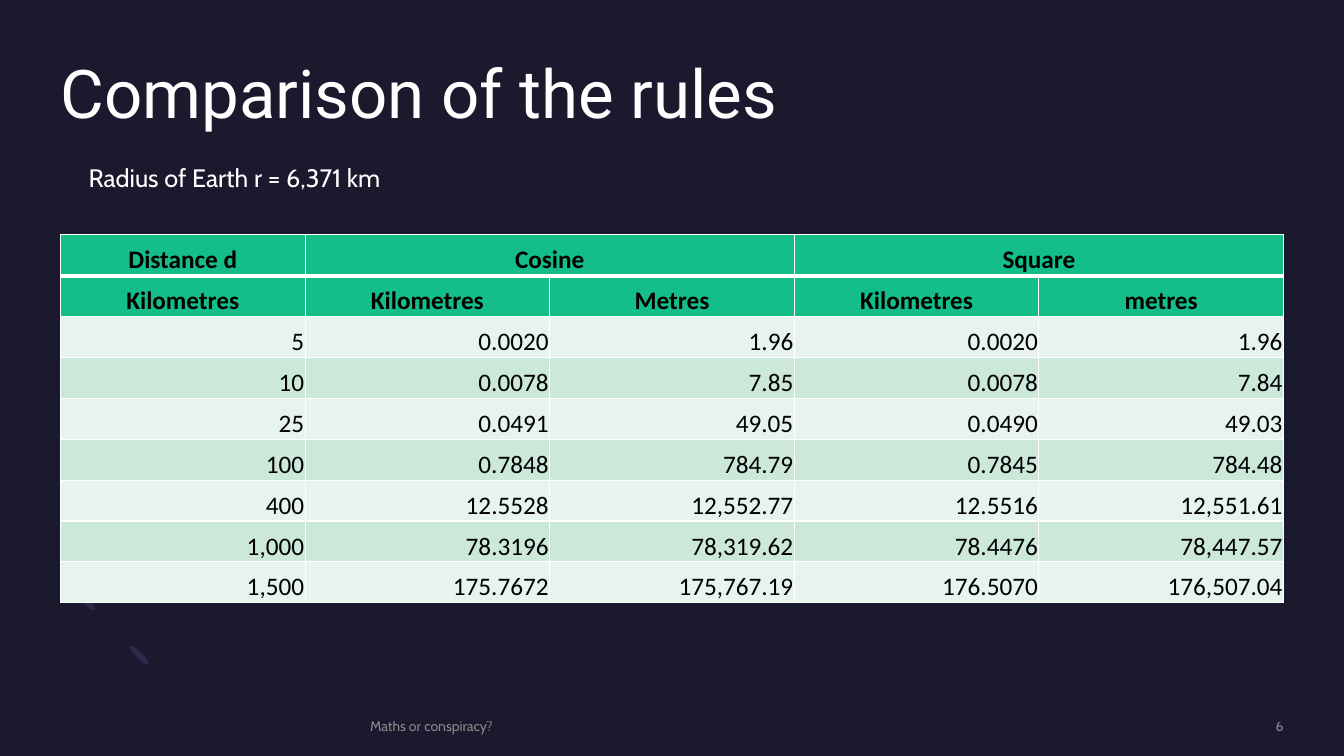
from lxml.etree import SubElement
from pptx import Presentation
from pptx.dml.color import RGBColor
from pptx.enum.shapes import MSO_SHAPE as Shape
from pptx.enum.text import MSO_ANCHOR as Anchor, PP_ALIGN as Align
from pptx.oxml.ns import qn
from pptx.util import Inches, Pt

TITLE = "Comparison of the rules"
RADIUS = "Radius of Earth r = 6,371 km"
FOOTER, PAGE_NUMBER = "Maths or conspiracy?", "6"
ROWS = [
    ("Distance d", "Cosine", "", "Square", ""),
    ("Kilometres", "Kilometres", "Metres", "Kilometres", "metres"),
    ("5", "0.0020", "1.96", "0.0020", "1.96"),
    ("10", "0.0078", "7.85", "0.0078", "7.84"),
    ("25", "0.0491", "49.05", "0.0490", "49.03"),
    ("100", "0.7848", "784.79", "0.7845", "784.48"),
    ("400", "12.5528", "12,552.77", "12.5516", "12,551.61"),
    ("1,000", "78.3196", "78,319.62", "78.4476", "78,447.57"),
    ("1,500", "175.7672", "175,767.19", "176.5070", "176,507.04"),
]
HEADER_ROWS = 2
HEADER_FILL, BAND_FILLS = "13BE89", ("E7F4ED", "CCE8DA")
WHITE, BLACK, GREY = "FFFFFF", "000000", "A6A6A6"
LEFT, WIDTH = 0.6, 12.13
TABLE_TOP, TABLE_HEIGHT = 2.33, 3.65
PETALS = [(1.35, 6.37), (0.82, 5.83)]
ARC_CURVES = [
    [((0.76, 6.59), (0.56, 6.39), (0.58, 6.05), (0.81, 5.82))],
    [((0.99, 6.0), (0.87, 6.11), (0.86, 6.29), (0.96, 6.38)),
     ((0.96, 6.38), (1.06, 6.48), (1.23, 6.47), (1.35, 6.36))],
    [((1.52, 6.54), (1.3, 6.76), (0.95, 6.79), (0.76, 6.59))],
]


def paint(fill, color, alpha=None):
    fill.solid()
    fill.fore_color.rgb = RGBColor.from_string(color)
    if alpha is not None:
        color_node = next(fill._xPr.iter(qn("a:srgbClr")))
        SubElement(color_node, qn("a:alpha"), val=str(alpha * 1000))


def write(frame, text, size=18, font="Cabin", color=WHITE, alpha=None,
          bold=False, align=Align.LEFT, spacing=None):
    para = frame.paragraphs[0]
    para.alignment = align
    if spacing:
        para.line_spacing = spacing
    span = para.add_run()
    span.text = text
    span.font.size, span.font.name, span.font.bold = Pt(size), font, bold
    paint(span.font.fill, color, alpha)


def set_margins(holder, left, top, right, bottom):
    holder.margin_left, holder.margin_top = Inches(left), Inches(top)
    holder.margin_right, holder.margin_bottom = Inches(right), Inches(bottom)


def add_text(page, text, left, top, width, height, **style):
    box = page.shapes.add_textbox(*map(Inches, (left, top, width, height)))
    box.text_frame.word_wrap = True
    write(box.text_frame, text, **style)
    return box


def add_border(cell, side, points):
    line = SubElement(cell._tc.get_or_add_tcPr(), qn(f"a:ln{side}"), w=str(Pt(points)))
    SubElement(SubElement(line, qn("a:solidFill")), qn("a:srgbClr"), val=WHITE)


def sample(curve, steps=12):
    for step in range(steps + 1):
        t = step / steps
        weights = ((1 - t) ** 3, 3 * t * (1 - t) ** 2, 3 * t * t * (1 - t), t ** 3)
        yield tuple(Inches(sum(w * point[axis] for w, point in zip(weights, curve)))
                    for axis in (0, 1))


def finish_shape(shape, color, alpha=None):
    paint(shape.fill, color, alpha)
    shape.line.fill.background()
    shape.shadow.inherit = False


def add_decoration(page):
    for left, top in PETALS:
        petal = page.shapes.add_shape(Shape.OVAL, *map(Inches, (left, top, 0.06, 0.26)))
        petal.rotation = 135
        finish_shape(petal, "2C284A")
    points = [point for group in ARC_CURVES for curve in group for point in sample(curve)]
    builder = page.shapes.build_freeform(*points[0])
    builder.add_line_segments(points[1:], close=True)
    finish_shape(builder.convert_to_shape(), "7771B2", 2)


def add_comparison(page):
    columns = len(ROWS[0])
    table = page.shapes.add_table(
        len(ROWS), columns, *map(Inches, (LEFT, TABLE_TOP, WIDTH, TABLE_HEIGHT))).table
    table.first_row = table.horz_banding = False
    for column in table.columns:
        column.width = Inches(WIDTH / columns)
    for index, values in enumerate(ROWS):
        table.rows[index].height = Inches(TABLE_HEIGHT / len(ROWS))
        header = index < HEADER_ROWS
        for position, value in enumerate(values):
            cell = table.cell(index, position)
            set_margins(cell, 0.01, 0.01, 0.01, 0)
            cell.vertical_anchor = Anchor.BOTTOM
            for side in "LRTB":
                heavy = (index, side) in ((0, "B"), (1, "T"))
                add_border(cell, side, 3 if heavy else 1)
            paint(cell.fill, HEADER_FILL if header else BAND_FILLS[index % 2])
            if value:
                write(cell.text_frame, value, font="Calibri", color=BLACK, bold=header,
                      align=Align.CENTER if header else Align.RIGHT)
    for start in (1, 3):
        table.cell(0, start).merge(table.cell(0, start + 1))


def main():
    deck = Presentation()
    deck.slide_width, deck.slide_height = Inches(13.33), Inches(7.5)
    page = deck.slides.add_slide(deck.slide_layouts[5])
    paint(page.background.fill, "1B192E")
    add_decoration(page)

    title = page.shapes.title
    title.left, title.top, title.width, title.height = map(Inches, (LEFT, 0.6, WIDTH, 0.76))
    set_margins(title.text_frame, 0, 0, 0, 0)
    title.text_frame.vertical_anchor = Anchor.TOP
    write(title.text_frame, TITLE, size=48, font="Roboto", spacing=0.9)

    for text, left, width, align in ((FOOTER, 3.67, 6.98, Align.LEFT),
                                     (PAGE_NUMBER, 10.88, 1.85, Align.RIGHT)):
        box = add_text(page, text, left, 7.12, width, 0.17, size=10,
                       color=GREY, alpha=80, align=align)
        set_margins(box.text_frame, 0, 0, 0, 0)
        box.text_frame.vertical_anchor = Anchor.MIDDLE

    add_comparison(page)
    add_text(page, RADIUS, 0.78, 1.56, 6.38, 0.4)
    deck.save("out.pptx")


if __name__ == "__main__":
    main()
